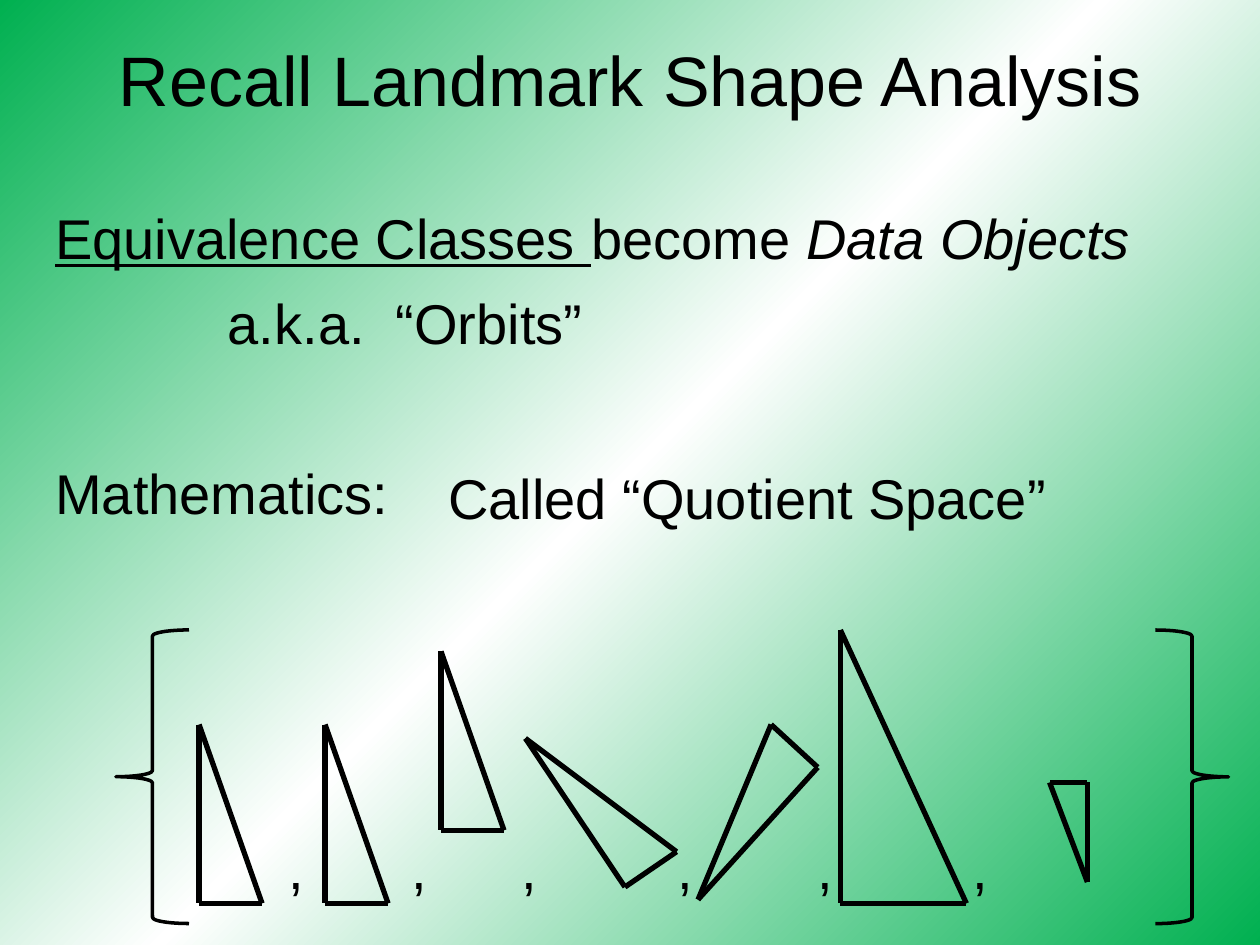
from copy import deepcopy
from dataclasses import dataclass
from itertools import combinations

from pptx import Presentation
from pptx.dml.color import RGBColor as RGB
from pptx.enum.shapes import MSO_CONNECTOR as Link, MSO_SHAPE as Shape
from pptx.enum.text import MSO_ANCHOR as Anchor, PP_ALIGN as Align
from pptx.oxml.ns import qn
from pptx.oxml.xmlchemy import OxmlElement as Node
from pptx.util import Inches, Pt


@dataclass(frozen=True)
class Theme:
    """Colours, type sizes and line widths of the slide."""
    ink: RGB = RGB(0, 0, 0)
    green: RGB = RGB(0, 0xB0, 0x50)
    white: RGB = RGB(255, 255, 255)
    face: str = "Arial"
    head: int = 40
    body: int = 32
    edge: int = 3
    brace: int = 2


THEME = Theme()


def paint(slide):
    """Fill the background with a diagonal green, white, green blend."""
    fill = slide.background.fill
    fill.gradient()
    fill.gradient_angle = 315
    stops = slide.element.find(".//" + qn("a:gsLst"))
    stops.append(deepcopy(stops[-1]))
    tints = (THEME.green, THEME.white, THEME.green)
    for stop, spot, tint in zip(fill.gradient_stops, (0, 0.5, 1), tints):
        stop.position = spot
        stop.color.rgb = tint


def style(para, size):
    """Give a paragraph the slide's font at one size."""
    font = para.font
    font.name, font.size = THEME.face, Pt(size)
    font.color.rgb = THEME.ink


def frame(slide, box):
    """Add a wrapping text box and return its text frame."""
    text = slide.shapes.add_textbox(*map(Inches, box)).text_frame
    text.word_wrap = True
    return text


def label(slide, box, words, size=THEME.body):
    """Write one line of text and return its text frame."""
    text = frame(slide, box)
    para = text.paragraphs[0]
    para.text = words
    style(para, size)
    return text


def title(slide, box, words):
    """Write the centred slide title."""
    text = label(slide, box, words, THEME.head)
    text.vertical_anchor = Anchor.MIDDLE
    text.paragraphs[0].alignment = Align.CENTER


def body(slide, box):
    """Write the statements about equivalence classes."""
    left, top, wide, _ = box
    text = frame(slide, box)
    rows = (
        (("Equivalence Classes ", "become ", "Data Objects"), 8, 0),
        (("a.k.a.  “Orbits”",), 6.5, 1.37),
        (("Mathematics:",), 55, 0),
    )
    for num, (parts, gap, inset) in enumerate(rows):
        para = text.add_paragraph() if num else text.paragraphs[0]
        para.line_spacing, para.space_before = 1.1, Pt(gap)
        para._p.get_or_add_pPr().set("marL", str(Inches(inset)))
        style(para, THEME.body)
        for part in parts:
            para.add_run().text = part
    first, _, last = text.paragraphs[0].runs
    first.font.underline = True
    last.font.italic = True
    shift = 3.12
    label(slide, (left + shift, top + 2.12, wide - shift, 0.6),
          "Called “Quotient Space”")


def right(x, y, wide, high):
    """Return the corners of an upright right triangle from its apex."""
    return (x, y), (x, y + high), (x + wide, y + high)


def draw(slide, left, top, points):
    """Draw a triangle as a group of three lines."""
    group = slide.shapes.add_group_shape().shapes
    for start, end in combinations(points, 2):
        ends = [Inches(base + val) for point in (start, end)
                for base, val in zip((left, top), point)]
        line = group.add_connector(Link.STRAIGHT, *ends)
        line.line.color.rgb = THEME.ink
        line.line.width = Pt(THEME.edge)
        line._element.spPr.append(Node("a:effectLst"))


def orbit(slide, box):
    """Draw the set of equivalent triangles between two braces."""
    left, top, wide, high = box
    for x in (1.27, 2.25, 3.12, 4.36, 5.47, 6.7):
        label(slide, (left + x, top + 1.57, 0.4, 0.6), ",")
    for points in (
        right(0.66, 0.75, 0.5, 1.42),
        right(1.66, 0.75, 0.5, 1.42),
        right(2.58, 0.17, 0.5, 1.42),
        ((3.25, 0.86), (4.04, 2.04), (4.45, 1.76)),
        ((4.62, 2.14), (5.2, 0.75), (5.57, 1.09)),
        right(5.75, 0, 1, 2.17),
        right(7.71, 2, -0.3, -0.79),
    ):
        draw(slide, left, top, points)
    span = 0.58
    for x, turn in ((left, 0), (left + wide - span, 180)):
        area = map(Inches, (x, top, span, high))
        brace = slide.shapes.add_shape(Shape.LEFT_BRACE, *area)
        brace.rotation = turn
        brace.shadow.inherit = False
        brace.fill.background()
        brace.line.color.rgb = THEME.ink
        brace.line.width = Pt(THEME.brace)


def main():
    """Build and save the slide."""
    deck = Presentation()
    deck.slide_width, deck.slide_height = Inches(10), Inches(7.5)
    slide = deck.slides.add_slide(deck.slide_layouts[6])
    paint(slide)
    title(slide, (0.5, 0, 9, 1.25), "Recall Landmark Shape Analysis")
    body(slide, (0.34, 1.51, 9.2, 2.8))
    orbit(slide, (0.92, 5, 8.83, 2.33))
    deck.save("out.pptx")


if __name__ == "__main__":
    main()
